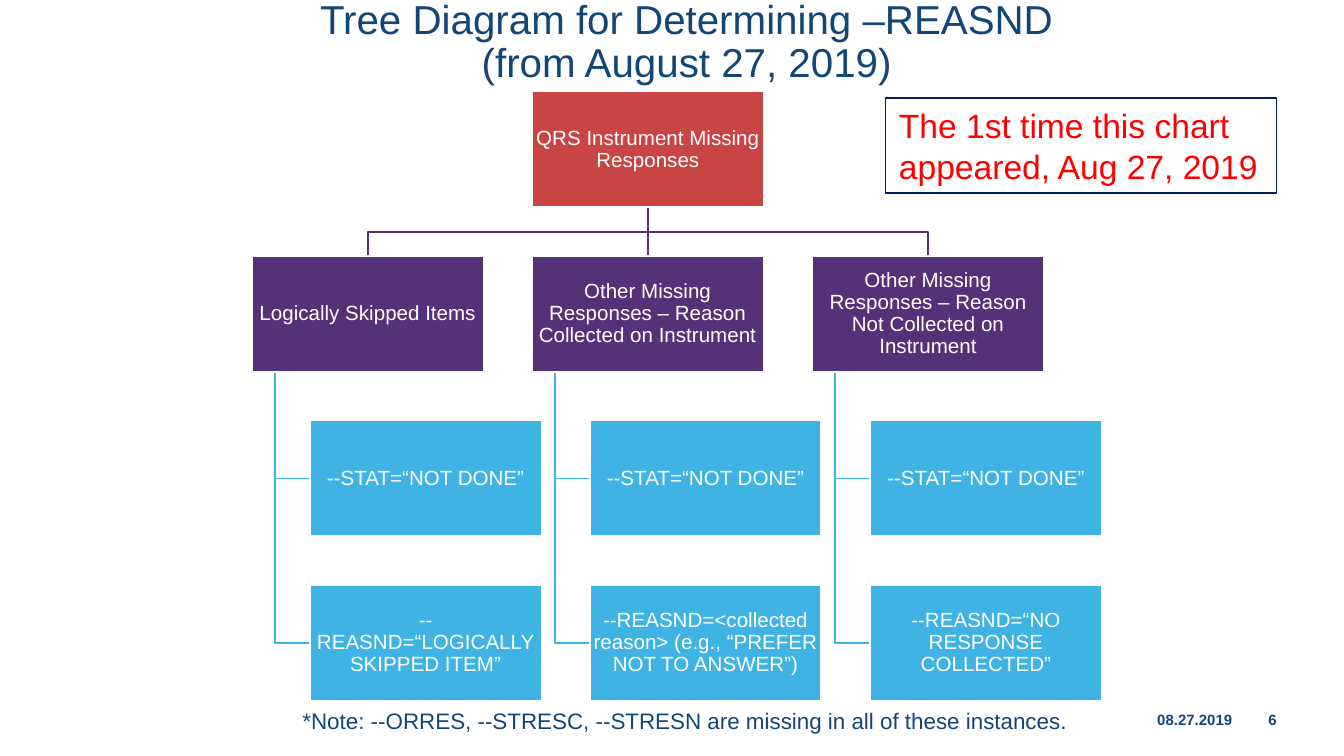
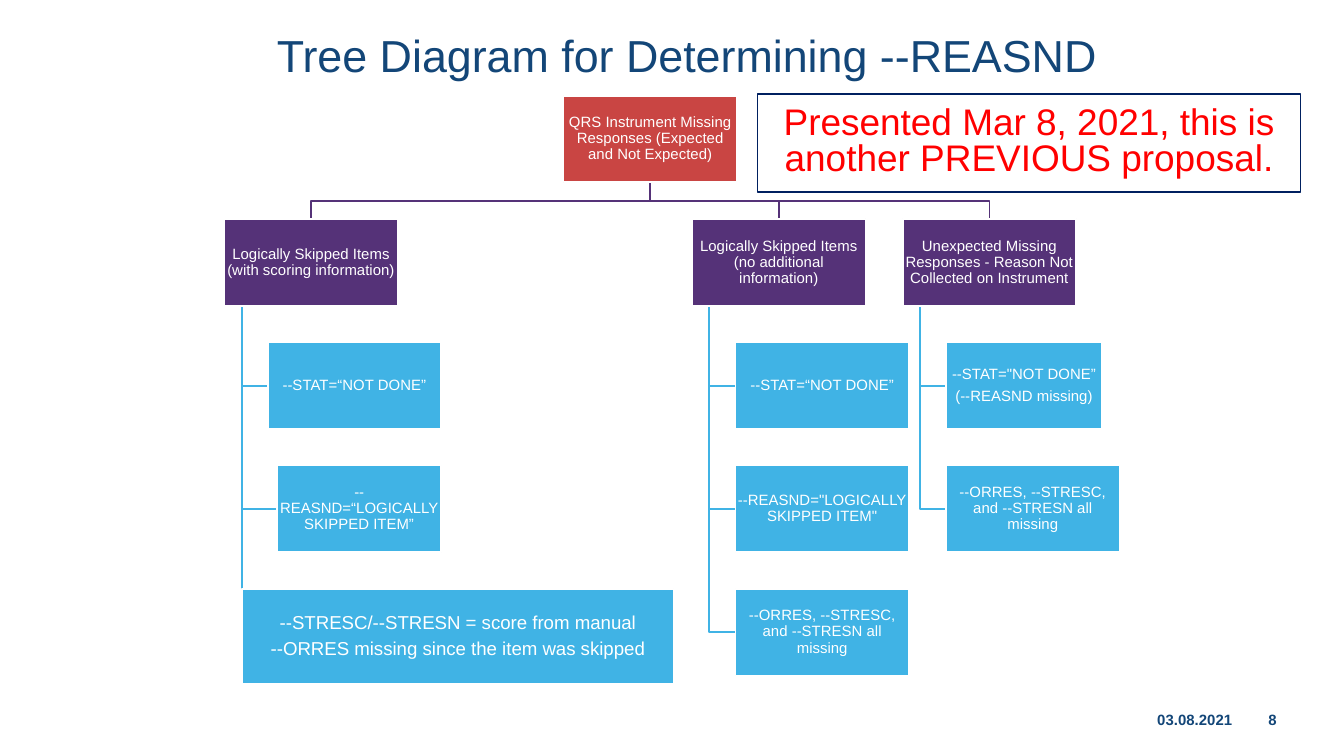
from dataclasses import dataclass

from lxml.etree import SubElement
from pptx import Presentation
from pptx.dml.color import RGBColor
from pptx.enum.shapes import MSO_CONNECTOR, MSO_SHAPE
from pptx.enum.text import MSO_ANCHOR, PP_ALIGN
from pptx.oxml.ns import qn
from pptx.util import Cm, Pt


@dataclass(frozen=True)
class Theme:
    font: str = "Arial"
    navy: str = "134678"
    border: str = "002060"
    alert: str = "FF0000"
    white: str = "FFFFFF"
    root: str = "C94543"
    branch: str = "553278"
    leaf: str = "40B3E5"
    footer_size: float = 8
    note_size: float = 12
    line_width: float = 1
    border_width: float = 0.75


THEME = Theme()
NOT_DONE = "--STAT=“NOT DONE”"
ALL_MISSING = "--ORRES, --STRESC, and --STRESN all missing"

# All lengths are in centimetres. A leaf is a text, or a text with its changes.
PAGES = [
    {
        "title": ("Tree Diagram for Determining –REASND\n(from August 27, 2019)", 21.6, 0),
        "date": "08.27.2019",
        "number": "6",
        "tree": {"top": 1.73, "width": 4.38, "height": 2.19, "step": 3.11, "size": 11},
        "root": "QRS Instrument Missing Responses",
        "branches": [
            (4.76, "Logically Skipped Items",
             [NOT_DONE, "--REASND=“LOGICALLY SKIPPED ITEM”"]),
            (10.05, "Other Missing Responses – Reason Collected on Instrument",
             [NOT_DONE, "--REASND=<collected reason> (e.g., “PREFER NOT TO ANSWER”)"]),
            (15.35, "Other Missing Responses – Reason Not Collected on Instrument",
             [NOT_DONE, "--REASND=“NO RESPONSE COLLECTED”"]),
        ],
        "callout": {
            "text": "The 1st time this chart appeared, Aug 27, 2019",
            "area": (16.74, 1.85, 7.39, 1.8),
            "size": 18,
            "insets": (0.25, 0.13),
            "align": PP_ALIGN.LEFT,
        },
        "note": "*Note: --ORRES, --STRESC, --STRESN are missing in all of these instances.",
    },
    {
        "title": ("Tree Diagram for Determining --REASND", 24, 0.28),
        "date": "03.08.2021",
        "number": "8",
        "tree": {"top": 1.81, "width": 3.28, "height": 1.64, "step": 2.33, "size": 8},
        "root": "QRS Instrument Missing Responses (Expected and Not Expected)",
        "branches": [
            (4.24, "Logically Skipped Items (with scoring information)",
             [NOT_DONE,
              ("--REASND=“LOGICALLY SKIPPED ITEM”", {"shift": 0.18, "width": 3.1}),
              ("--STRESC/--STRESN = score from manual\n"
               "--ORRES missing since the item was skipped",
               {"shift": -0.49, "width": 8.16, "height": 1.8, "size": 10})]),
            (13.08, "Logically Skipped Items (no additional information)",
             [NOT_DONE, "--REASND=\"LOGICALLY SKIPPED ITEM\"", ALL_MISSING]),
            (17.06, "Unexpected Missing Responses - Reason Not Collected on Instrument",
             [("--STAT=\"NOT DONE”\n(--REASND missing)", {"width": 2.95}), ALL_MISSING]),
        ],
        "callout": {
            "text": "Presented Mar 8, 2021, this is another PREVIOUS proposal.",
            "area": (14.32, 1.78, 10.26, 1.85),
            "size": 19.8,
            "align": PP_ALIGN.CENTER,
            "spacing": 0.8,
        },
    },
]


def rgb(color):
    return RGBColor.from_string(color)


def write(shape, paragraphs, size, color, align=PP_ALIGN.CENTER, bold=False,
          spacing=1.0, insets=(0, 0), anchor=MSO_ANCHOR.MIDDLE):
    """Fill a shape with paragraphs; a line feed inside one is a line break."""
    frame = shape.text_frame
    side, edge = (Cm(inset) for inset in insets)
    frame_format = {"word_wrap": True, "vertical_anchor": anchor, "margin_left": side,
                    "margin_right": side, "margin_top": edge, "margin_bottom": edge}
    for name, value in frame_format.items():
        setattr(frame, name, value)
    for index, text in enumerate(paragraphs):
        para = frame.add_paragraph() if index else frame.paragraphs[0]
        para.text = text
        para_format = {"alignment": align, "line_spacing": spacing}
        if index:
            para_format["space_before"] = Pt(round(0.35 * size, 1))
        for name, value in para_format.items():
            setattr(para, name, value)
        for span in para.runs:
            for name, value in {"name": THEME.font, "size": Pt(size), "bold": bold}.items():
                setattr(span.font, name, value)
            span.font.color.rgb = rgb(color)


def add_text(page, area, text, size, color=THEME.navy, **options):
    box = page.shapes.add_textbox(*map(Cm, area))
    write(box, [text], size, color, **options)


def set_line(shape, color, width):
    shape.line.color.rgb = rgb(color)
    shape.line.width = Pt(width)


def add_box(page, area, line, line_width, fill=None):
    box = page.shapes.add_shape(MSO_SHAPE.RECTANGLE, *map(Cm, area))
    box.shadow.inherit = False
    if fill:
        box.fill.solid()
        box.fill.fore_color.rgb = rgb(fill)
    else:
        box.fill.background()
    set_line(box, line, line_width)
    return box


def add_link(page, points, color):
    """Join points: a connector when they lie on one vertical, else a bent line."""
    points = [(Cm(x), Cm(y)) for x, y in points]
    if len({x for x, _ in points}) == 1:
        link = page.shapes.add_connector(MSO_CONNECTOR.STRAIGHT, *points[0], *points[-1])
        set_line(link, color, THEME.line_width)
        SubElement(link._element.spPr, qn("a:effectLst"))
        return
    builder = page.shapes.build_freeform(*points[0])
    builder.add_line_segments(points[1:], close=False)
    link = builder.convert_to_shape()
    link.shadow.inherit = False
    link.fill.background()
    set_line(link, color, THEME.line_width)


def add_tree(page, tree, root, branches):
    top, width, height, step = (tree[key] for key in ("top", "width", "height", "step"))
    tops = [top + level * step for level in range(5)]
    root_left = (branches[0][0] + branches[-1][0]) / 2
    root_center = root_left + width / 2
    bus = (tops[0] + height + tops[1]) / 2
    nodes = [(root, (root_left, tops[0], width, height), THEME.root, tree["size"])]

    for left, label, leaves in branches:
        center, trunk = left + width / 2, left + width / 10
        nodes.append((label, (left, tops[1], width, height), THEME.branch, tree["size"]))
        add_link(page, [(root_center, tops[0] + height), (root_center, bus),
                        (center, bus), (center, tops[1])], THEME.branch)
        for leaf, leaf_top in zip(leaves, tops[2:]):
            text, changes = (leaf, {}) if isinstance(leaf, str) else leaf
            look = {"shift": 0, **tree, **changes}
            leaf_left = left + width / 4 + look["shift"]
            area = (leaf_left, leaf_top, look["width"], look["height"])
            nodes.append((text, area, THEME.leaf, look["size"]))
            middle = leaf_top + look["height"] / 2
            add_link(page, [(trunk, tops[1] + height), (trunk, middle),
                            (leaf_left, middle)], THEME.leaf)

    for text, area, fill, size in nodes:
        box = add_box(page, area, THEME.white, THEME.line_width, fill)
        write(box, text.split("\n"), size, THEME.white, spacing=0.9, insets=(0.02, 0.02))


def add_callout(page, text, area, size, **options):
    box = add_box(page, area, THEME.border, THEME.border_width)
    write(box, [text], size, THEME.alert, **options)


def add_page(deck, content):
    page = deck.slides.add_slide(deck.slide_layouts[6])
    title, size, top = content["title"]
    add_text(page, (1.83, top, 22.3, 1.63), title, size, spacing=0.9)
    for key, left, width in (("date", 19.94, 3.35), ("number", 23.29, 0.84)):
        add_text(page, (left, 13.23, width, 0.76), content[key], THEME.footer_size,
                 align=PP_ALIGN.RIGHT, bold=True)
    add_tree(page, content["tree"], content["root"], content["branches"])
    if "note" in content:
        add_text(page, (4.24, 13.23, 17.42, 0.76), content["note"], THEME.note_size,
                 insets=(0.25, 0.13), anchor=MSO_ANCHOR.TOP)
    add_callout(page, **content["callout"])


def main():
    deck = Presentation()
    deck.slide_width, deck.slide_height = Cm(25.4), Cm(14.29)
    for content in PAGES:
        add_page(deck, content)
    deck.save("out.pptx")


if __name__ == "__main__":
    main()
